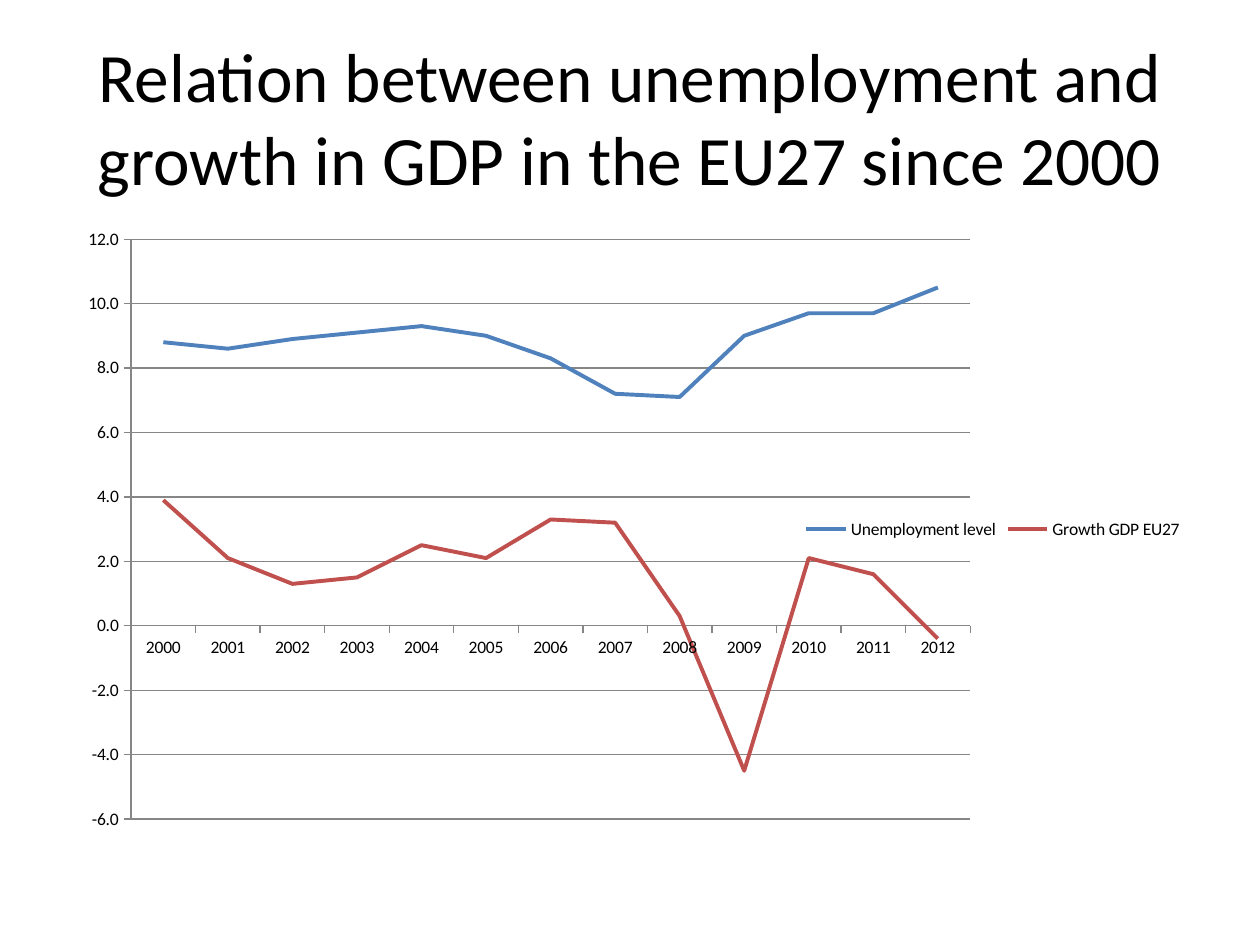
from lxml import etree
from pptx import Presentation
from pptx.chart.data import CategoryChartData
from pptx.dml.color import RGBColor
from pptx.enum.chart import XL_CHART_TYPE, XL_LEGEND_POSITION, XL_MARKER_STYLE, XL_TICK_MARK
from pptx.enum.text import MSO_ANCHOR, PP_ALIGN
from pptx.oxml.ns import qn
from pptx.util import Pt

PX = 9144
FONT = "Calibri"
BLACK = RGBColor(0x00, 0x00, 0x00)
GRAY = RGBColor(0x86, 0x86, 0x86)
BLUE = RGBColor(0x4F, 0x81, 0xBD)
RED = RGBColor(0xC0, 0x50, 0x4D)
LINE = XL_CHART_TYPE.LINE
LEGEND_RIGHT = XL_LEGEND_POSITION.RIGHT
NO_MARKER = XL_MARKER_STYLE.NONE
TICK_OUT, TICK_NONE = XL_TICK_MARK.OUTSIDE, XL_TICK_MARK.NONE
MIDDLE = MSO_ANCHOR.MIDDLE
CENTER = PP_ALIGN.CENTER

TITLE = "Relation between unemployment and growth in GDP in the EU27 since 2000"
YEARS = [str(year) for year in range(2000, 2013)]
RATES = [
    ("Unemployment level", BLUE,
     [8.8, 8.6, 8.9, 9.1, 9.3, 9, 8.3, 7.2, 7.1, 9, 9.7, 9.7, 10.5]),
    ("Growth GDP EU27", RED,
     [3.9, 2.1, 1.3, 1.5, 2.5, 2.1, 3.3, 3.2, 0.3, -4.5, 2.1, 1.6, -0.4]),
]


def scaled(box):
    """Turn a box in px into EMU."""
    return [length * PX for length in box]


def style_font(font, size):
    """Apply the slide's typeface and text colour at a point size."""
    font.name = FONT
    font.size = Pt(size)
    font.color.rgb = BLACK


def style_line(line, color, width):
    """Give a line its colour and point width."""
    line.color.rgb = color
    line.width = Pt(width)


def make_layout(fractions, inner=False):
    """Return a manual chart layout for x, y, w, h fractions."""
    layout = etree.Element(qn("c:layout"))
    manual = etree.SubElement(layout, qn("c:manualLayout"))
    settings = [("layoutTarget", "inner")] if inner else []
    settings += [("xMode", "edge"), ("yMode", "edge")]
    settings += zip("xywh", map(str, fractions))
    for tag, value in settings:
        etree.SubElement(manual, qn(f"c:{tag}")).set("val", value)
    return layout


def add_title(slide, box):
    """Place the centred slide title in the box."""
    frame = slide.shapes.add_textbox(*scaled(box)).text_frame
    frame.word_wrap = True
    frame.vertical_anchor = MIDDLE
    heading = frame.paragraphs[0]
    heading.text = TITLE
    heading.alignment = CENTER
    style_font(heading.font, 39.6)


def style_axes(chart):
    """Set scale, ticks, number format and gridlines."""
    years, percent = chart.category_axis, chart.value_axis
    for axis in (years, percent):
        axis.major_tick_mark = TICK_OUT
        axis.minor_tick_mark = TICK_NONE
        style_line(axis.format.line, GRAY, 0.75)
    percent.minimum_scale, percent.maximum_scale, percent.major_unit = -6, 12, 2
    percent.tick_labels.number_format = "#,##0.0"
    percent.tick_labels.number_format_is_linked = False
    percent.has_major_gridlines = True
    style_line(percent.major_gridlines.format.line, GRAY, 0.75)


def add_rates_chart(slide, box):
    """Place the unemployment and growth line chart in the box."""
    data = CategoryChartData(number_format="#,##0.0")
    data.categories = YEARS
    for name, _, values in RATES:
        data.add_series(name, values)
    chart = slide.shapes.add_chart(LINE, *scaled(box), data).chart
    chart.has_title = False
    style_font(chart.font, 10)
    chart.plots[0].vary_by_categories = False
    for series, (_, color, _) in zip(chart.plots[0].series, RATES):
        series.smooth = False
        series.marker.style = NO_MARKER
        style_line(series.format.line, color, 2.25)
    style_axes(chart)

    chart.has_legend = True
    legend = chart.legend
    legend.position = LEGEND_RIGHT
    legend.include_in_layout = False
    legend_xml = legend._element
    plot_area = chart._chartSpace.chart.plotArea
    for parent in (legend_xml, plot_area):
        for layout in parent.findall(qn("c:layout")):
            parent.remove(layout)
    legend_xml.insert(1, make_layout((0.65, 0.47, 0.34, 0.05)))
    plot_area.insert(0, make_layout((0.06, 0.03, 0.74, 0.93), inner=True))


def main():
    """Build and save the slide."""
    deck = Presentation()
    deck.slide_width, deck.slide_height = scaled((1000, 750))
    slide = deck.slides.add_slide(deck.slide_layouts[6])
    add_title(slide, (50, 30, 900, 125))
    add_rates_chart(slide, (50, 175, 900, 495))
    deck.save("out.pptx")


if __name__ == "__main__":
    main()
